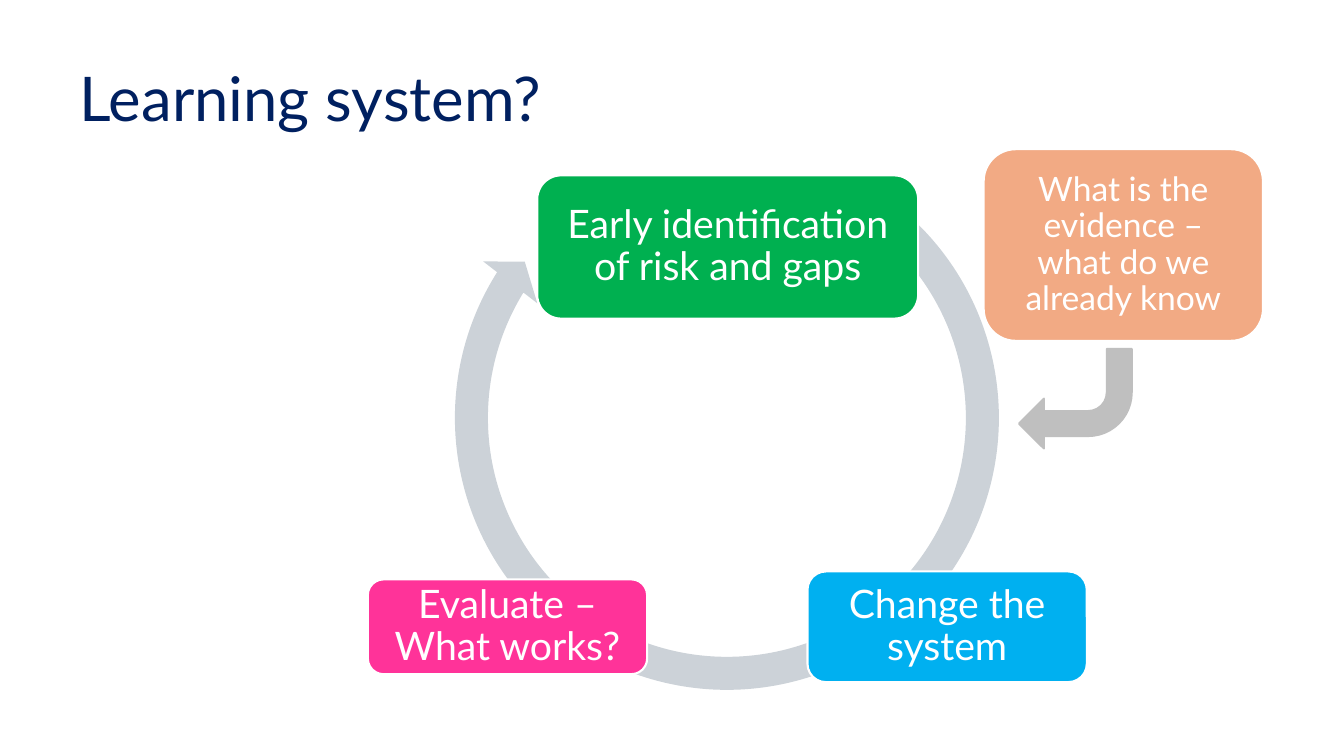
"""Build the learning system cycle slide."""
from pptx import Presentation
from pptx.dml.color import RGBColor
from pptx.enum.shapes import MSO_SHAPE as Preset
from pptx.enum.text import MSO_ANCHOR as Anchor, MSO_AUTO_SIZE as AutoSize, PP_ALIGN as Align
from pptx.util import Cm, Pt

NAVY = RGBColor(0x00, 0x20, 0x60)
WHITE = RGBColor(0xFF, 0xFF, 0xFF)
GREEN = RGBColor(0x00, 0xB0, 0x50)
BLUE = RGBColor(0x00, 0xB0, 0xF0)
PINK = RGBColor(0xFF, 0x33, 0x99)
PEACH = RGBColor(0xF2, 0xAA, 0x84)
CYCLE_GREY = RGBColor(0xCC, 0xD2, 0xD8)
ARROW_GREY = RGBColor(0xBF, 0xBF, 0xBF)

FONT = "Lato"
CYCLE_ARC = (0.057, 3.405, 127.21, 180.602, 0.059)
STEPS = (
    ("Early identification of risk and gaps", (13.54, 4.42, 9.6, 3.61), GREEN, 28, 0.3),
    ("Change the system", (20.35, 14.4, 7.04, 2.79), BLUE, 28, 0.3),
    ("Evaluate – What works?", (9.27, 14.6, 7.04, 2.39), PINK, 28, 0.3),
    ("What is the evidence – what do we already know", (24.79, 3.76, 7.04, 4.83), PEACH, 24, 0.38),
)


def write_text(frame, wording, size, color, align):
    """Fill a text frame with one formatted paragraph."""
    frame.word_wrap = True
    frame.auto_size = AutoSize.NONE
    frame.vertical_anchor = Anchor.MIDDLE
    paragraph = frame.paragraphs[0]
    paragraph.text = wording
    paragraph.alignment = align
    paragraph.line_spacing = 0.9
    paragraph.font.name = FONT
    paragraph.font.size = Pt(size)
    paragraph.font.color.rgb = color


def add_title(slide, wording):
    """Place and format the slide title."""
    title = slide.shapes.title
    title.left, title.top, title.width, title.height = map(Cm, (1.75, 0.71, 29.21, 3.68))
    write_text(title.text_frame, wording, 44, NAVY, Align.LEFT)


def add_filled(slide, preset, box, fill, outline=None):
    """Add a flat preset shape with an optional outline."""
    filled = slide.shapes.add_shape(preset, *map(Cm, box))
    filled.shadow.inherit = False
    filled.fill.solid()
    filled.fill.fore_color.rgb = fill
    if outline is None:
        filled.line.fill.background()
    else:
        filled.line.color.rgb = outline
        filled.line.width = Pt(1.5)
    return filled


def add_cycle(slide):
    """Add the circular arrow behind the steps."""
    cycle = add_filled(slide, Preset.CIRCULAR_ARROW, (11.02, 3.23, 14.6, 14.6), CYCLE_GREY)
    for index, value in enumerate(CYCLE_ARC):
        cycle.adjustments[index] = value


def add_step(slide, wording, box, fill, size, inset):
    """Add a rounded box with centred white text."""
    step = add_filled(slide, Preset.ROUNDED_RECTANGLE, box, fill, WHITE)
    frame = step.text_frame
    frame.margin_left = frame.margin_right = frame.margin_top = frame.margin_bottom = Cm(inset)
    write_text(frame, wording, size, WHITE, Align.CENTER)


def add_evidence_arrow(slide):
    """Add the bent arrow from the evidence to the cycle."""
    arrow = add_filled(slide, Preset.BENT_ARROW, (25.68, 8.79, 2.84, 2.51), ARROW_GREY, ARROW_GREY)
    arrow.rotation = 180


def main():
    """Build and save the slide."""
    deck = Presentation()
    deck.slide_width, deck.slide_height = Cm(33.87), Cm(19.05)
    slide = deck.slides.add_slide(deck.slide_layouts[5])
    add_title(slide, "Learning system?")
    add_cycle(slide)
    for step in STEPS:
        add_step(slide, *step)
    add_evidence_arrow(slide)
    deck.save("out.pptx")


if __name__ == "__main__":
    main()
